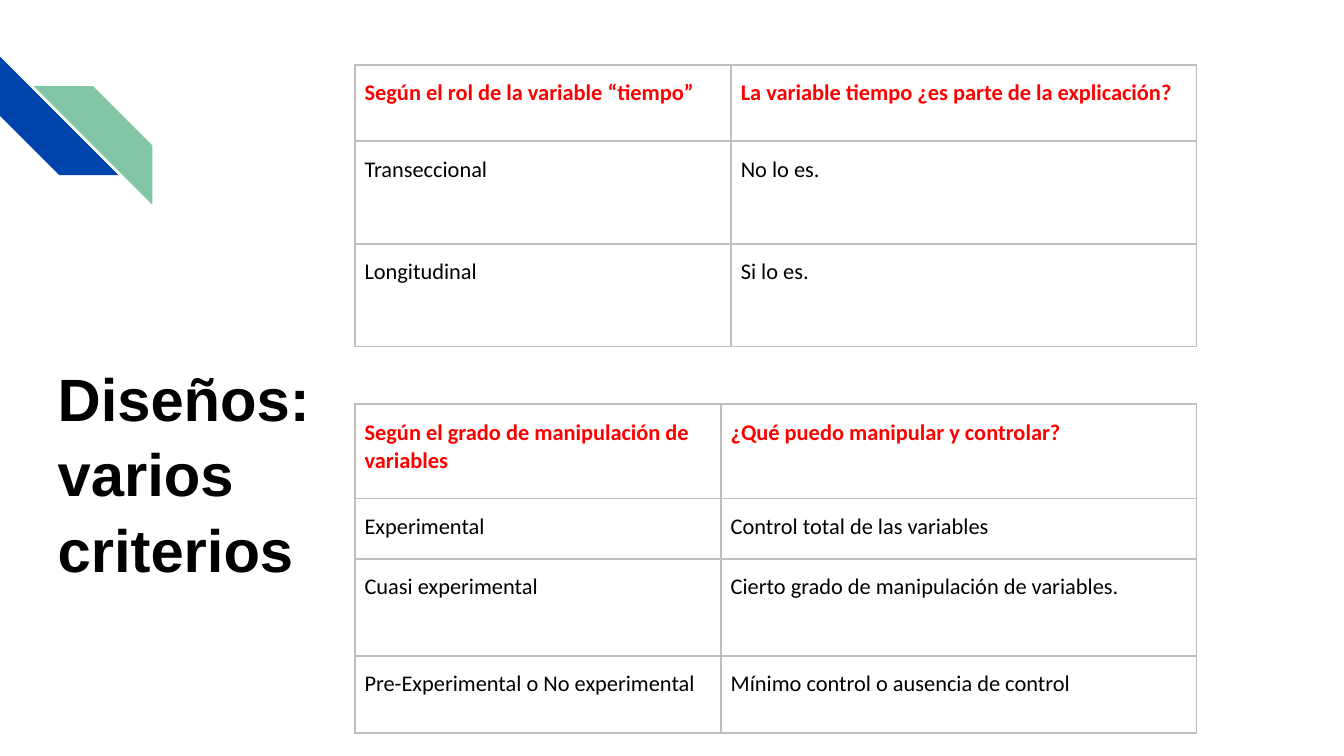
import pptx
import pptx.dml.color
import pptx.enum.shapes
import pptx.enum.text
import pptx.oxml
import pptx.oxml.ns
import pptx.util
from pptx.util import Cm

BORDER_COLOR = "BFBFBF"
TABLE_LEFT = 6.71

TIME_ROWS = [
    ("Según el rol de la variable “tiempo”", "La variable tiempo ¿es parte de la explicación?"),
    ("Transeccional", "No lo es."),
    ("Longitudinal", "Si lo es."),
]
CONTROL_ROWS = [
    ("Según el grado de manipulación de variables", "¿Qué puedo manipular y controlar?"),
    ("Experimental", "Control total de las variables"),
    ("Cuasi experimental", "Cierto grado de manipulación de variables."),
    ("Pre-Experimental o No experimental", "Mínimo control o ausencia de control"),
]


def rgb(color):
    return pptx.dml.color.RGBColor.from_string(color)


def write_text(frame, text, *, size, font, color="000000", bold=False, after=0):
    paragraph = frame.paragraphs[0]
    paragraph.line_spacing = 1.05
    paragraph.space_after = pptx.util.Pt(after)
    run = paragraph.add_run()
    run.text = text
    run.font.size = pptx.util.Pt(size)
    run.font.name = font
    run.font.bold = bold
    run.font.color.rgb = rgb(color)


def add_stripe(slide, left, top, rotation, color):
    stripe = slide.shapes.add_shape(
        pptx.enum.shapes.MSO_SHAPE.DIAGONAL_STRIPE, Cm(left), Cm(top), Cm(2.24), Cm(2.24))
    stripe.adjustments[0] = 0.5
    stripe.rotation = rotation
    stripe.shadow.inherit = False
    stripe.fill.solid()
    stripe.fill.fore_color.rgb = rgb(color)
    stripe.line.fill.background()


def format_cell(cell):
    cell.margin_left = cell.margin_right = Cm(0.18)
    cell.margin_top = cell.margin_bottom = Cm(0.25)
    # Borders come before the fill in the cell properties
    properties = cell._tc.get_or_add_tcPr()
    for side in ("lnL", "lnR", "lnT", "lnB"):
        properties.append(pptx.oxml.parse_xml(
            f'<a:{side} {pptx.oxml.ns.nsdecls("a")} w="{pptx.util.Pt(1)}"><a:solidFill>'
            f'<a:srgbClr val="{BORDER_COLOR}"/></a:solidFill></a:{side}>'))
    cell.fill.background()


def add_criteria_table(slide, top, widths, heights, rows):
    table = slide.shapes.add_table(
        len(rows), len(widths), Cm(TABLE_LEFT), Cm(top), Cm(sum(widths)), Cm(sum(heights))).table
    for column, width in zip(table.columns, widths):
        column.width = Cm(width)
    for r, (height, texts) in enumerate(zip(heights, rows)):
        table.rows[r].height = Cm(height)
        is_header = r == 0
        for c, text in enumerate(texts):
            cell = table.cell(r, c)
            format_cell(cell)
            write_text(cell.text_frame, text, size=12, font="Calibri", after=10,
                       color="FF0000" if is_header else "000000", bold=is_header)


def add_title(slide, text):
    title = slide.shapes.add_textbox(Cm(0.84), Cm(6.65), Cm(5.66), Cm(4.37))
    title.text_frame.word_wrap = True
    title.text_frame.auto_size = pptx.enum.text.MSO_AUTO_SIZE.SHAPE_TO_FIT_TEXT
    write_text(title.text_frame, text, size=32, font="Arial", bold=True)


def main():
    deck = pptx.Presentation()
    deck.slide_width, deck.slide_height = Cm(25.4), Cm(14.29)
    slide = deck.slides.add_slide(deck.slide_layouts[6])

    # Corner decoration
    add_stripe(slide, 0, 1.07, 270, "0145AC")
    add_stripe(slide, 0.64, 1.63, 90, "82C7A5")

    # Design criteria
    add_criteria_table(slide, 1.23, (7.11, 8.79), (1.44, 1.94, 1.94), TIME_ROWS)
    add_criteria_table(slide, 7.64, (6.92, 8.98), (1.78, 1.15, 1.83, 1.46), CONTROL_ROWS)

    add_title(slide, "Diseños: varios criterios")
    deck.save("out.pptx")


if __name__ == "__main__":
    main()
